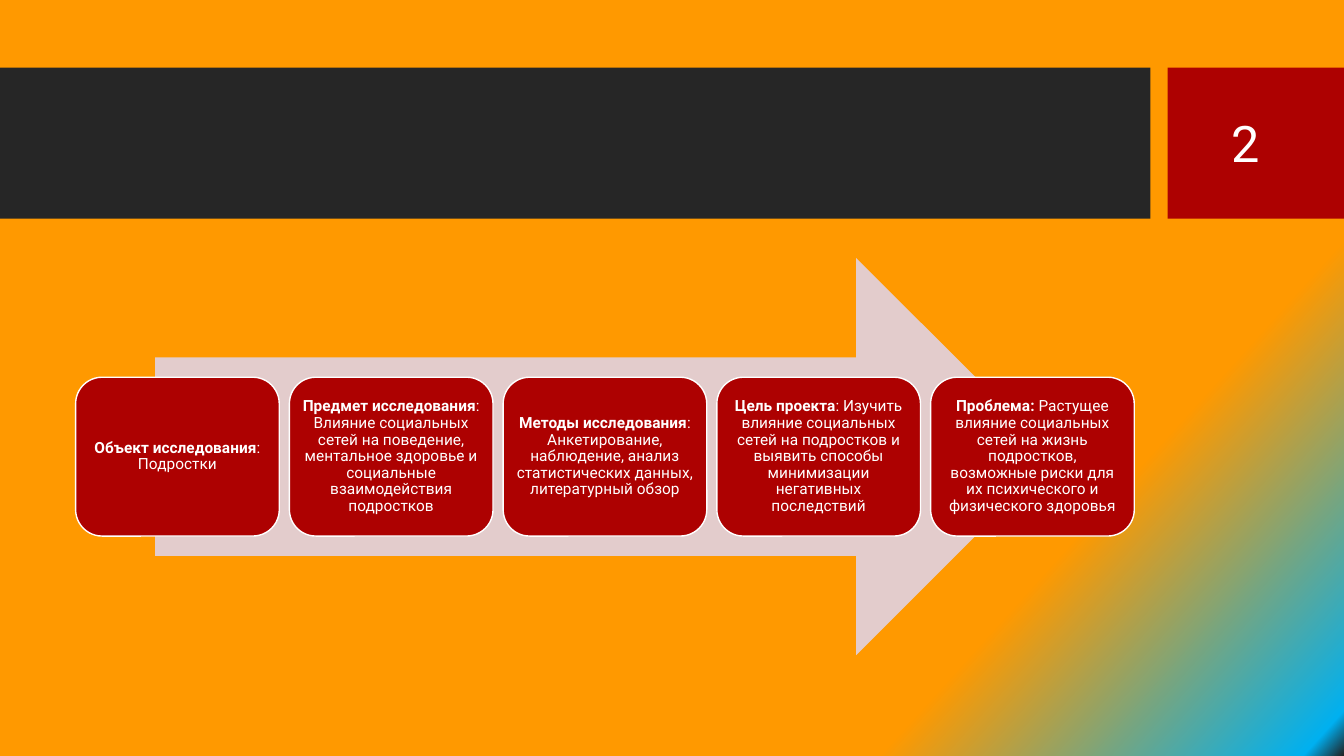
from copy import deepcopy

from pptx import Presentation
from pptx.dml.color import RGBColor
from pptx.enum.shapes import MSO_SHAPE
from pptx.enum.text import MSO_ANCHOR, PP_ALIGN
from pptx.oxml.ns import qn
from pptx.util import Inches, Pt

FONT = "Roboto"
WHITE, RED, DARK, PALE = "FFFFFF", "AD0101", "262626", "E3CCCC"
BACKGROUND_STOPS = [(0.77, "FF9900"), (0.98, "00B0F0"), (1, "222222")]

CARDS = [
    ("Объект исследования", ": Подростки"),
    ("Предмет исследования", ": Влияние социальных сетей на поведение, ментальное "
     "здоровье и социальные взаимодействия подростков"),
    ("Методы исследования", ": Анкетирование, наблюдение, анализ статистических "
     "данных, литературный обзор"),
    ("Цель проекта", ": Изучить влияние социальных сетей на подростков и выявить "
     "способы минимизации негативных последствий"),
    ("Проблема:", " Растущее влияние социальных сетей на жизнь подростков, "
     "возможные риски для их психического и физического здоровья"),
]


def color(value):
    return RGBColor.from_string(value)


def add_block(shapes, kind, left, top, width, height, fill, line=None):
    block = shapes.add_shape(kind, Inches(left), Inches(top), Inches(width), Inches(height))
    block.shadow.inherit = False
    block.fill.solid()
    block.fill.fore_color.rgb = color(fill)
    if line:
        block.line.color.rgb = color(line)
        block.line.width = Pt(1)
    else:
        block.line.fill.background()
    return block


def write_text(shape, spans, size, inset=0.1, line_spacing=1.0):
    """Fill a shape with one centred paragraph of (text, bold) spans."""
    frame = shape.text_frame
    frame.word_wrap = True
    frame.vertical_anchor = MSO_ANCHOR.MIDDLE
    frame.margin_left = frame.margin_right = Inches(inset)
    frame.margin_top = frame.margin_bottom = Inches(inset)
    para = frame.paragraphs[0]
    para.alignment = PP_ALIGN.CENTER
    para.line_spacing = line_spacing
    for text, bold in spans:
        span = para.add_run()
        span.text = text
        span.font.name = FONT
        span.font.size = Pt(size)
        span.font.bold = bold
        span.font.color.rgb = color(WHITE)


def paint_background(page):
    fill = page.background.fill
    fill.gradient()
    fill.gradient_angle = 360 - 42
    stop_list = page.element.find(".//" + qn("a:gsLst"))
    stop_list.append(deepcopy(stop_list[-1]))
    for stop, (position, value) in zip(fill.gradient_stops, BACKGROUND_STOPS):
        stop.position = position
        stop.color.rgb = color(value)


def add_header(page, left, top, width, height):
    # Dark title band, then the red page number block at the right edge
    number_width, gap = 1.75, 0.17
    number_left = left + width - number_width
    add_block(page.shapes, MSO_SHAPE.RECTANGLE, left, top,
              width - number_width - gap, height, DARK)
    add_block(page.shapes, MSO_SHAPE.RECTANGLE, number_left, top,
              number_width, height, RED)
    number = page.shapes.add_textbox(Inches(number_left + 0.15), Inches(top + 0.15),
                                     Inches(1.26), Inches(1.19))
    write_text(number, [("2", False)], 36)


def add_process(page, left, top, width, height):
    group = page.shapes.add_group_shape()

    # Arrow centred behind the cards
    arrow_width = width * 0.85
    add_block(group.shapes, MSO_SHAPE.RIGHT_ARROW, left + (width - arrow_width) / 2,
              top, arrow_width, height, PALE)

    # Row of equal cards; the rounded corners add their own text inset
    gap = 0.1
    card_width = (width - gap * (len(CARDS) - 1)) / len(CARDS)
    card_height = height * 0.4
    card_top = top + (height - card_height) / 2
    for index, (label, detail) in enumerate(CARDS):
        card = add_block(group.shapes, MSO_SHAPE.ROUNDED_RECTANGLE,
                         left + index * (card_width + gap), card_top,
                         card_width, card_height, RED, WHITE)
        write_text(card, [(label, True), (detail, False)], 11,
                   inset=0.05, line_spacing=0.9)


def main():
    deck = Presentation()
    deck.slide_width, deck.slide_height = Inches(13.33), Inches(7.5)
    page = deck.slides.add_slide(deck.slide_layouts[6])
    paint_background(page)
    add_header(page, 0, 0.67, 13.33, 1.5)
    add_process(page, 0.75, 2.56, 10.5, 3.94)
    deck.save("out.pptx")


if __name__ == "__main__":
    main()
